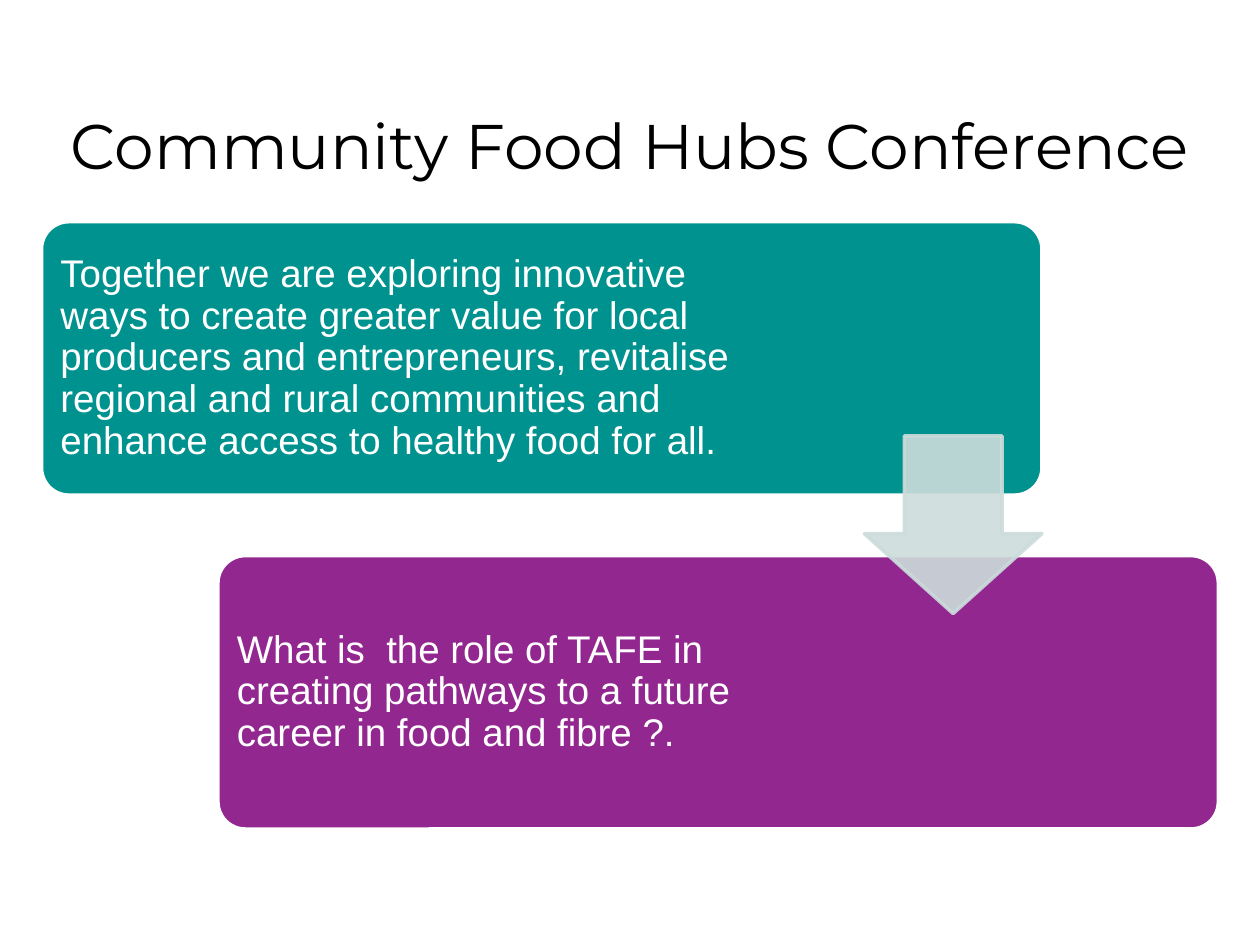
import pptx
import pptx.util
from lxml import etree
from pptx.dml.color import RGBColor
from pptx.enum.shapes import MSO_SHAPE
from pptx.enum.text import MSO_ANCHOR, PP_ALIGN
from pptx.oxml.ns import qn

TEAL = RGBColor(0x00, 0x92, 0x8F)
PLUM = RGBColor(0x92, 0x27, 0x8F)
MIST = RGBColor(0xCC, 0xDC, 0xDB)
WHITE = RGBColor(0xFF, 0xFF, 0xFF)
BLACK = RGBColor(0x00, 0x00, 0x00)

Inches, Pt = pptx.util.Inches, pptx.util.Pt

deck = pptx.Presentation()
deck.slide_width, deck.slide_height = Inches(10), Inches(7.5)
slide = deck.slides.add_slide(deck.slide_layouts[5])
shapes = slide.shapes


def write(frame, text, font="Arial", size=22, color=WHITE,
          align=PP_ALIGN.LEFT, spacing=0.9, inset=0.09):
    frame.word_wrap = True
    frame.vertical_anchor = MSO_ANCHOR.MIDDLE
    frame.margin_left = frame.margin_right = Inches(inset)
    frame.margin_top = frame.margin_bottom = Inches(inset)
    para = frame.paragraphs[0]
    para.alignment = align
    para.line_spacing = spacing
    run = para.add_run()
    run.text = text
    run.font.name = font
    run.font.size = Pt(size)
    run.font.color.rgb = color


def draw(kind, box, fill, line, adjust):
    shape = shapes.add_shape(kind, *map(Inches, box))
    shape.shadow.inherit = False
    shape.fill.solid()
    shape.fill.fore_color.rgb = fill
    shape.line.color.rgb = line
    shape.line.width = Pt(2)
    for i, value in enumerate(adjust):
        shape.adjustments[i] = value
    return shape


# Title
title = shapes.title
title.left, title.top = 0, Inches(0.67)
title.width, title.height = deck.slide_width, Inches(0.95)
write(title.text_frame, "Community Food Hubs Conference", font="Montserrat",
      size=36, color=BLACK, align=PP_ALIGN.CENTER, spacing=1.0)

# Two staggered cards: each one steps right and down from the last
left, top, wide, high = 0.33, 1.76, 7.94, 2.17
step_x, step_y, pad = 1.4, 2.65, 0.06
cards = [
    (TEAL, 5.7, "Together we are exploring innovative ways to create greater "
     "value for local producers and entrepreneurs, revitalise regional and "
     "rural communities and enhance access to healthy food for all."),
    (PLUM, 5.01, "What is  the role of TAFE in creating pathways to a future "
     "career in food and fibre ?."),
]
for i, (fill, span, text) in enumerate(cards):
    x, y = left + i * step_x, top + i * step_y
    draw(MSO_SHAPE.ROUNDED_RECTANGLE, (x, y, wide, high), fill, WHITE, [0.1])
    label = shapes.add_textbox(Inches(x + pad), Inches(y + pad),
                               Inches(span), Inches(high - 2 * pad))
    write(label.text_frame, text)

# Arrow linking the cards, flush with the first card's right edge
side = 1.41
arrow = draw(MSO_SHAPE.DOWN_ARROW, (left + wide - side, 3.46, side, side),
             MIST, MIST, [0.55, 0.45])
for color in arrow._element.spPr.iter(qn("a:srgbClr")):
    etree.SubElement(color, qn("a:alpha")).set("val", "90000")

deck.save("out.pptx")
